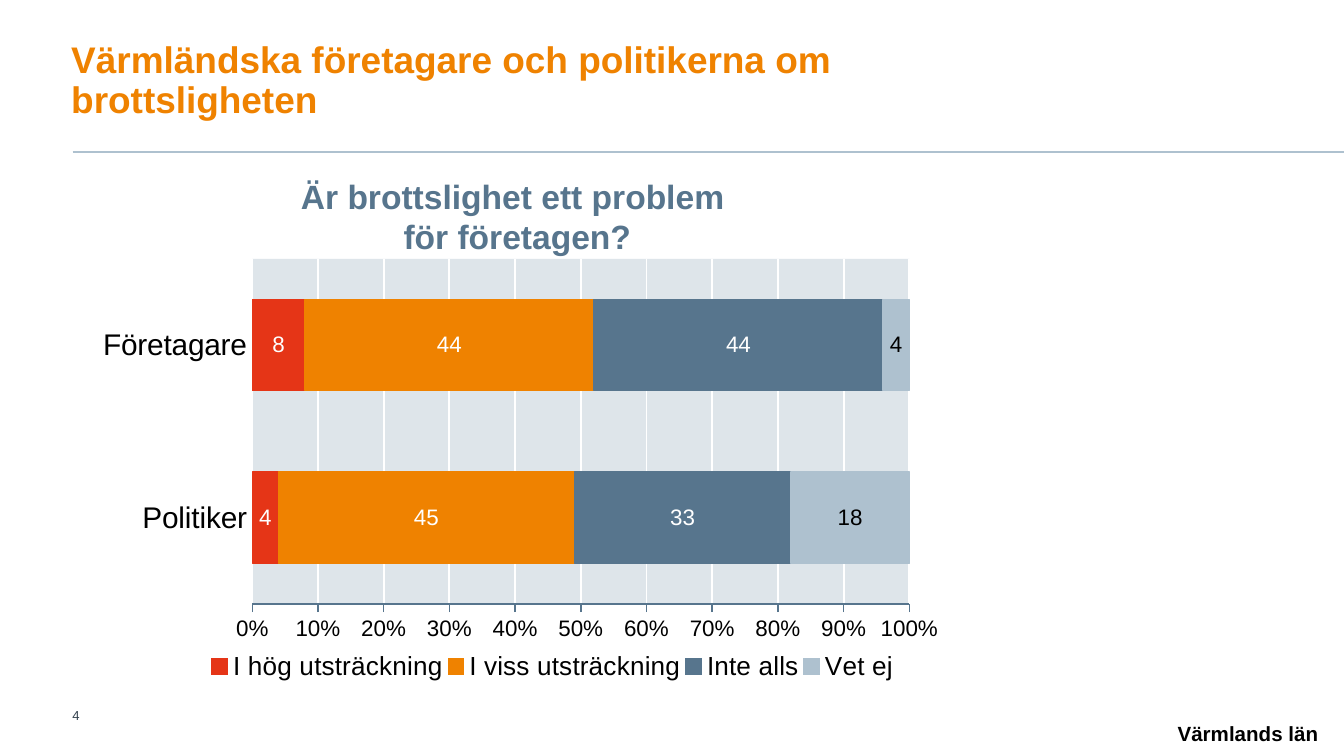
from lxml import etree
from pptx import Presentation
from pptx.chart.data import CategoryChartData
from pptx.dml.color import RGBColor
from pptx.enum.chart import (XL_CHART_TYPE, XL_LABEL_POSITION as LabelPos,
                             XL_LEGEND_POSITION as LegendPos, XL_TICK_MARK as Tick)
from pptx.enum.shapes import MSO_CONNECTOR
from pptx.enum.text import MSO_ANCHOR as Anchor, PP_ALIGN as Align
from pptx.oxml import parse_xml
from pptx.oxml.ns import nsdecls, qn
from pptx.util import Inches, Pt

FONT = "Arial"
RED, ORANGE, SLATE, MIST = "E53517", "EF8200", "57758D", "AEC1CF"
PALE, NAVY, WHITE, BLACK = "DEE5EA", "33414E", "FFFFFF", "000000"


def rgb(code):
    return RGBColor.from_string(code)


def style_font(font, size, color, bold=False):
    font.name, font.size, font.bold = FONT, Pt(size), bold
    font.color.rgb = rgb(color)


def style_line(line, color, width):
    line.color.rgb = rgb(color)
    line.width = Pt(width)


def set_layout(parent, index, box, inner=False):
    """Place a chart part by fractions of the chart area."""
    for old in parent.findall(qn("c:layout")):
        parent.remove(old)
    target = '<c:layoutTarget val="inner"/>' if inner else ""
    modes = '<c:xMode val="edge"/><c:yMode val="edge"/>'
    sizes = "".join(f'<c:{key} val="{val}"/>' for key, val in zip("xywh", box))
    parent.insert(index, parse_xml(
        f'<c:layout {nsdecls("c")}><c:manualLayout>{target}{modes}{sizes}'
        '</c:manualLayout></c:layout>'))


class SlideBuilder:
    def __init__(self, slide):
        self.slide = slide

    def text(self, box, lines, size, color, bold=False, align=Align.LEFT,
             anchor=Anchor.TOP, insets=(0.1, 0.05, 0.1, 0.05), spacing=None, wrap=True):
        frame = self.slide.shapes.add_textbox(*map(Inches, box)).text_frame
        frame.word_wrap = wrap
        frame.vertical_anchor = anchor
        (frame.margin_left, frame.margin_top,
         frame.margin_right, frame.margin_bottom) = map(Inches, insets)
        for i, line in enumerate(lines):
            paragraph = frame.add_paragraph() if i else frame.paragraphs[0]
            paragraph.alignment = align
            paragraph.line_spacing = spacing
            run = paragraph.add_run()
            run.text = line
            style_font(run.font, size, color, bold)

    def rule(self, start, end, color, width):
        rule = self.slide.shapes.add_connector(
            MSO_CONNECTOR.STRAIGHT, *map(Inches, start + end))
        style_line(rule.line, color, width)
        etree.SubElement(rule._element.spPr, qn("a:effectLst"))

    def stacked_bars(self, box, categories, answers):
        data = CategoryChartData()
        data.categories = categories
        for name, values, _, _ in answers:
            data.add_series(name, values)
        chart = self.slide.shapes.add_chart(
            XL_CHART_TYPE.BAR_STACKED_100, *map(Inches, box), data).chart
        chart.has_title = False
        style_font(chart.font, 18, BLACK)

        # Bars and value labels
        plot = chart.plots[0]
        plot.gap_width, plot.overlap = 89, 100
        plot.vary_by_categories = False
        for series, (_, _, fill, label_color) in zip(plot.series, answers):
            series.format.fill.solid()
            series.format.fill.fore_color.rgb = rgb(fill)
            style_line(series.format.line, fill, 0.75)
            labels = series.data_labels
            labels.show_value = True
            labels.position = LabelPos.CENTER
            labels.number_format = "#,##0"
            labels.number_format_is_linked = False
            style_font(labels.font, 12, label_color)

        # Axes
        people = chart.category_axis
        people.major_tick_mark = people.minor_tick_mark = Tick.NONE
        people.format.line.fill.background()
        style_font(people.tick_labels.font, 16, BLACK)
        share = chart.value_axis
        share.minimum_scale, share.maximum_scale, share.major_unit = 0, 1, 0.1
        share.major_tick_mark, share.minor_tick_mark = Tick.OUTSIDE, Tick.NONE
        share.tick_labels.number_format = "0%"
        share.tick_labels.number_format_is_linked = False
        style_font(share.tick_labels.font, 12, BLACK)
        style_line(share.format.line, SLATE, 0.75)
        style_line(share.major_gridlines.format.line, WHITE, 1)

        # Legend below the plot
        chart.has_legend = True
        legend = chart.legend
        legend.position = LegendPos.BOTTOM
        legend.include_in_layout = False
        style_font(legend.font, 14, BLACK)
        set_layout(legend._element, 1, (0.14, 0.89, 0.61, 0.08))

        # Plot area placement and background
        area = chart._chartSpace.find(f'{qn("c:chart")}/{qn("c:plotArea")}')
        set_layout(area, 0, (0.18, 0.08, 0.58, 0.72), inner=True)
        area.append(parse_xml(
            f'<c:spPr {nsdecls("c", "a")}><a:solidFill><a:srgbClr val="{PALE}"/>'
            '</a:solidFill><a:ln><a:noFill/></a:ln></c:spPr>'))


def main():
    # Widescreen page, 16:9
    deck = Presentation()
    deck.slide_width = Inches(10)
    deck.slide_height = deck.slide_width * 9 // 16
    builder = SlideBuilder(deck.slides.add_slide(deck.slide_layouts[6]))

    # Heading
    builder.rule((0.54, 1.13), (10, 1.13), MIST, 1)
    builder.text((0.53, 0.28, 7.65, 0.67),
                 ["Värmländska företagare och politikerna om brottsligheten"],
                 19.8, ORANGE, bold=True, anchor=Anchor.BOTTOM,
                 insets=(0, 0, 0.1, 0.05), spacing=0.9)

    # Survey answers: name, values, bar colour, label colour
    answers = [
        ("I hög utsträckning", (4, 8), RED, WHITE),
        ("I viss utsträckning", (45, 44), ORANGE, WHITE),
        ("Inte alls", (33, 44), SLATE, WHITE),
        ("Vet ej", (18, 4), MIST, BLACK),
    ]
    builder.stacked_bars((0.36, 1.64, 8.43, 3.57), ["Politiker", "Företagare"], answers)

    # Footer
    builder.text((5.18, 5.23, 4.63, 0.32), ["Värmlands län"], 11, BLACK, bold=True,
                 align=Align.RIGHT, anchor=Anchor.BOTTOM, insets=(0, 0, 0, 0))
    builder.text((0.44, 5.26, 0.34, 0.13), ["4"], 7, NAVY, anchor=Anchor.MIDDLE)

    # Question above the chart
    builder.text((2.12, 1.26, 3.46, 0.71),
                 ["Är brottslighet ett problem ", "för företagen?"],
                 18, SLATE, bold=True, align=Align.CENTER, wrap=False)

    deck.save("out.pptx")


if __name__ == "__main__":
    main()
